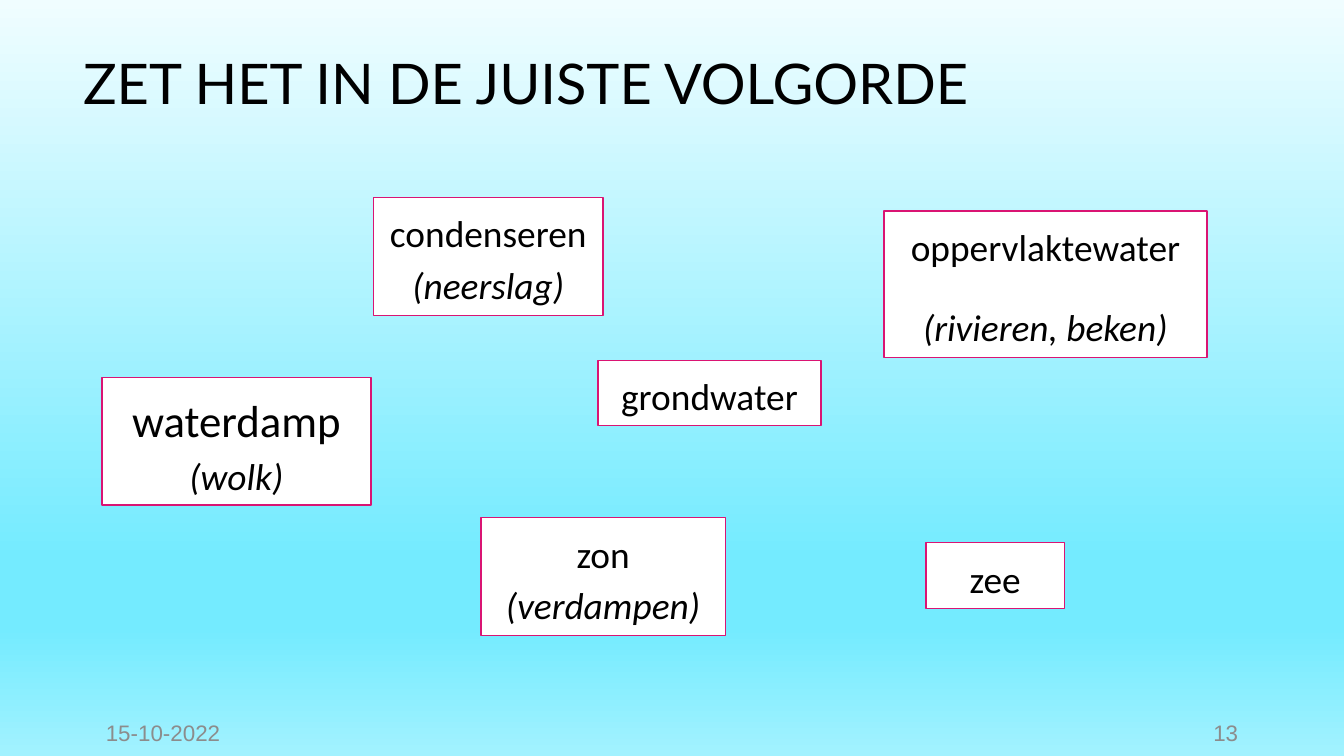
from dataclasses import dataclass

from lxml import etree
from pptx import Presentation
from pptx.dml.color import RGBColor
from pptx.enum.shapes import MSO_SHAPE
from pptx.enum.text import MSO_ANCHOR, MSO_AUTO_SIZE, PP_ALIGN
from pptx.oxml.ns import qn
from pptx.util import Cm, Pt

RECTANGLE = MSO_SHAPE.RECTANGLE
LEFT, CENTER, RIGHT = PP_ALIGN.LEFT, PP_ALIGN.CENTER, PP_ALIGN.RIGHT
TOP, MIDDLE = MSO_ANCHOR.TOP, MSO_ANCHOR.MIDDLE
GROW = MSO_AUTO_SIZE.SHAPE_TO_FIT_TEXT

BLACK, WHITE, PINK, GREY = "000000", "FFFFFF", "DA1473", "8C8C8C"
SKY_STOPS = [(0, "F0FDFF"), (74, "74EBFF"), (83, "74EBFF"), (100, "A2F2FF")]


@dataclass
class Span:
    text: str
    size: float = 20
    italic: bool = False


@dataclass
class Card:
    left: float
    top: float
    width: float
    height: float
    paragraphs: list[list[Span]]


CARDS = [
    Card(7.06, 3.73, 4.34, 2.24, [[Span("condenseren "), Span("(neerslag)", italic=True)]]),
    Card(16.71, 3.99, 6.1, 2.77, [[Span("oppervlaktewater")],
                                  [Span("(rivieren, beken)", italic=True)]]),
    Card(1.93, 7.14, 5.08, 2.41, [[Span("waterdamp ", 24), Span("(wolk)", italic=True)]]),
    Card(9.09, 9.78, 4.62, 2.24, [[Span("zon "), Span("(verdampen)", italic=True)]]),
    Card(11.3, 6.81, 4.22, 1.24, [[Span("grondwater")]]),
    Card(17.5, 10.26, 2.62, 1.24, [[Span("zee")]]),
]


def color(value: str) -> RGBColor:
    return RGBColor.from_string(value)


def add_span(para, text: str, *, size: float, font: str, fill: str = BLACK,
             italic: bool = False) -> None:
    run = para.add_run()
    run.text = text
    run.font.size = Pt(size)
    run.font.name = font
    run.font.italic = italic
    run.font.color.rgb = color(fill)


def add_label(page, text: str, left: float, top: float, width: float, height: float, *,
              size: float, font: str, fill: str = BLACK, align=LEFT, anchor=TOP,
              line_spacing: float = 1.0, margins: bool = True) -> None:
    box = page.shapes.add_textbox(Cm(left), Cm(top), Cm(width), Cm(height))
    frame = box.text_frame
    frame.word_wrap = True
    frame.vertical_anchor = anchor
    if not margins:
        frame.margin_left = frame.margin_right = frame.margin_top = frame.margin_bottom = 0
    para = frame.paragraphs[0]
    para.alignment = align
    para.line_spacing = line_spacing
    add_span(para, text, size=size, font=font, fill=fill)


def add_card(page, card: Card) -> None:
    box = page.shapes.add_shape(RECTANGLE, Cm(card.left), Cm(card.top),
                                Cm(card.width), Cm(card.height))
    box.shadow.inherit = False
    box.fill.solid()
    box.fill.fore_color.rgb = color(WHITE)
    box.line.color.rgb = color(PINK)
    box.line.width = Pt(0.75)
    frame = box.text_frame
    frame.word_wrap = True
    frame.auto_size = GROW
    frame.vertical_anchor = TOP
    for index, spans in enumerate(card.paragraphs):
        para = frame.add_paragraph() if index else frame.paragraphs[0]
        para.alignment = CENTER
        para.line_spacing = 1.15
        para.space_before = Pt(5 if index else 0)
        para.space_after = Pt(10)
        for span in spans:
            add_span(para, span.text, size=span.size, font="Calibri", italic=span.italic)


def paint_background(page, stops: list[tuple[int, str]]) -> None:
    fill = page.background.fill
    fill.gradient()
    fill.gradient_angle = 270  # counter-clockwise: first stop at the top
    stop_list = next(page.element.iter(qn("a:gsLst")))
    for old_stop in list(stop_list):
        stop_list.remove(old_stop)
    for percent, value in stops:
        stop = etree.SubElement(stop_list, qn("a:gs"), pos=str(percent * 1000))
        etree.SubElement(stop, qn("a:srgbClr"), val=value)


def main() -> None:
    deck = Presentation()
    deck.slide_width, deck.slide_height = Cm(25.4), Cm(14.29)
    page = deck.slides.add_slide(deck.slide_layouts[6])
    paint_background(page, SKY_STOPS)

    # Title
    add_label(page, "ZET HET IN DE JUISTE VOLGORDE", 1.57, 1.07, 22.28, 1.78,
              size=30, font="Lato", line_spacing=0.9, margins=False)

    # Water cycle cards
    for card in CARDS:
        add_card(page, card)

    # Footer: date and page number
    for text, left, align in [("15-10-2022", 1.75, LEFT), ("13", 17.93, RIGHT)]:
        add_label(page, text, left, 13.46, 5.72, 0.76, size=12, font="Arial",
                  fill=GREY, align=align, anchor=MIDDLE)

    deck.save("out.pptx")


if __name__ == "__main__":
    main()
